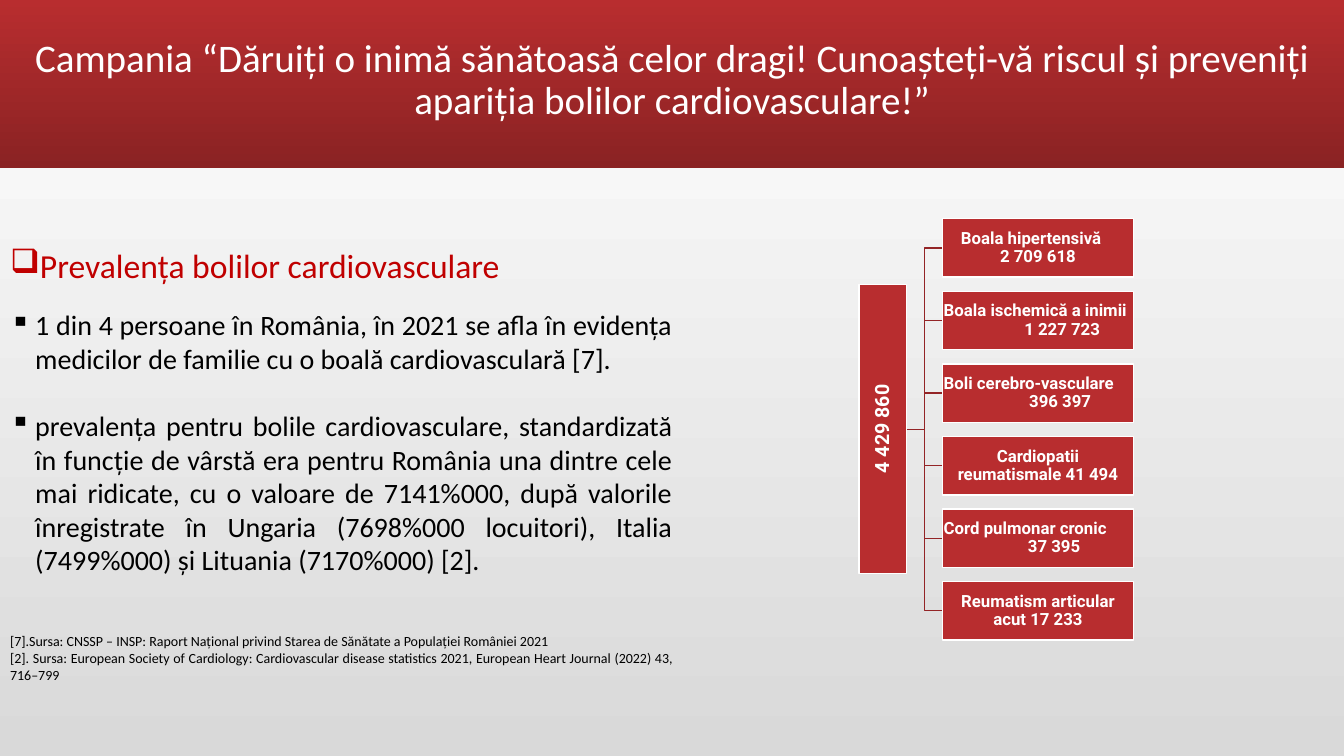
from lxml.etree import SubElement
from pptx import Presentation
from pptx.dml.color import RGBColor
from pptx.enum.shapes import MSO_SHAPE
from pptx.enum.text import MSO_ANCHOR, PP_ALIGN
from pptx.oxml.ns import qn
from pptx.util import Inches, Pt

RED = RGBColor(0xB8, 0x2D, 0x2F)
DEEP = RGBColor(0x8A, 0x22, 0x23)
WIRE = RGBColor(0x93, 0x24, 0x26)
HEAD = RGBColor(0xC0, 0x00, 0x00)
GREY = RGBColor(0xD9, 0xD9, 0xD9)
WHITE = RGBColor(0xFF, 0xFF, 0xFF)
BLACK = RGBColor(0x00, 0x00, 0x00)

TRUNK = 4.26
STEP = 0.72
CAUSES = [
    ("Boala hipertensivă", "2 709 618", 0.17, 0),
    ("Boala ischemică a inimii", "1 227 723", 0, 0.48),
    ("Boli cerebro-vasculare", "396 397", 0, 0.44),
    ("Cardiopatii", "reumatismale 41 494", None, 0),
    ("Cord pulmonar cronic", "37 395", 0, 0.32),
    ("Reumatism articular", "acut 17 233", None, 0),
]


def write(frame, text, size=12, color=WHITE, font="Calibri", bold=False,
          align=PP_ALIGN.CENTER, line=1.0, before=0, left=0, hang=0, bullet=None):
    para = frame.paragraphs[0]
    if para.runs:
        para = frame.add_paragraph()
    para.alignment = align
    para.line_spacing = line
    para.space_before = Pt(before)
    props = para._p.get_or_add_pPr()
    props.set("marL", str(Inches(left)))
    props.set("indent", str(Inches(-hang)))
    if bullet:
        SubElement(props, qn("a:buChar")).set("char", bullet)
    run = para.add_run()
    run.text = text
    run.font.size = Pt(size)
    run.font.name = font
    run.font.bold = bold
    run.font.color.rgb = color


def shade(fill, first, last, angle):
    fill.gradient()
    fill.gradient_angle = angle
    for stop, color in zip(fill.gradient_stops, (first, last)):
        stop.color.rgb = color


def set_frame(shape, pad, anchor):
    frame = shape.text_frame
    frame.word_wrap = True
    frame.vertical_anchor = anchor
    frame.margin_left = frame.margin_right = Inches(pad)
    frame.margin_top = frame.margin_bottom = Inches(pad)
    return frame


def add_rect(slide, x, y, wide, high):
    rect = slide.shapes.add_shape(
        MSO_SHAPE.RECTANGLE, Inches(x), Inches(y), Inches(wide), Inches(high))
    rect.shadow.inherit = False
    return rect


def add_node(slide, x, y, wide, high):
    node = add_rect(slide, x, y, wide, high)
    node.fill.solid()
    node.fill.fore_color.rgb = RED
    node.line.color.rgb = WHITE
    node.line.width = Pt(1)
    return node, set_frame(node, 0.01, MSO_ANCHOR.MIDDLE)


def add_wire(slide, y):
    pen = slide.shapes.build_freeform(Inches(8.99), Inches(TRUNK))
    bends = [(9.17, TRUNK), (9.17, y), (9.35, y)]
    pen.add_line_segments([(Inches(a), Inches(b)) for a, b in bends], close=False)
    wire = pen.convert_to_shape()
    wire.shadow.inherit = False
    wire.fill.background()
    wire.line.color.rgb = WIRE
    wire.line.width = Pt(1)


def add_title(slide):
    band = add_rect(slide, 0, 0, 13.33, 1.67)
    shade(band.fill, RED, DEEP, 270)
    band.line.fill.background()
    box = slide.shapes.add_textbox(0, 0, Inches(13.33), Inches(1.6))
    write(set_frame(box, 0.1, MSO_ANCHOR.MIDDLE),
          "Campania “Dăruiți o inimă sănătoasă celor dragi! Cunoașteți-vă riscul "
          "și preveniți apariția bolilor cardiovasculare!”", size=27.9, line=0.9)


def add_body(slide):
    box = slide.shapes.add_textbox(Inches(0.1), Inches(2.43), Inches(6.57), Inches(4.4))
    frame = set_frame(box, 0, MSO_ANCHOR.TOP)
    both = PP_ALIGN.JUSTIFY
    write(frame, "Prevalența bolilor cardiovasculare", size=24, color=HEAD,
          align=both, left=0.25, hang=0.25, bullet="❑")
    points = [
        ("1 din 4 persoane în România, în 2021 se afla în evidența medicilor de "
         "familie cu o boală cardiovasculară [7].", 16),
        ("prevalența pentru bolile cardiovasculare, standardizată în funcție de "
         "vârstă era pentru România una dintre cele mai ridicate, cu o valoare de "
         "7141%000, după valorile înregistrate în Ungaria (7698%000 locuitori), "
         "Italia (7499%000) și Lituania (7170%000) [2].", 24),
    ]
    for text, gap in points:
        write(frame, text, size=20, color=BLACK, align=both, before=gap,
              left=0.25, hang=0.25, bullet="▪")
    notes = [
        ("[7].Sursa: CNSSP – INSP: Raport Național privind Starea de Sănătate a "
         "Populației României 2021", 40),
        ("[2]. Sursa: European Society of Cardiology: Cardiovascular disease "
         "statistics 2021, European Heart Journal (2022) 43, 716–799", 0),
    ]
    for text, gap in notes:
        write(frame, text, size=10, color=BLACK, align=both, before=gap)


def add_tree(slide):
    rows = [TRUNK + STEP * (i - 2.5) for i in range(len(CAUSES))]
    for y in rows:
        add_wire(slide, y)
    total, frame = add_node(slide, 7.32, 4.02, 2.87, 0.47)
    total.rotation = 270
    write(frame, "4 429 860", size=14, font="Roboto", bold=True, line=0.9)
    for y, (name, count, start, shift) in zip(rows, CAUSES):
        frame = add_node(slide, 9.35, y - 0.29, 1.89, 0.58)[1]
        side = PP_ALIGN.CENTER if start is None else PP_ALIGN.LEFT
        write(frame, name, font="Roboto", bold=True, line=0.9,
              align=side, left=start or 0)
        write(frame, count, font="Roboto", bold=True, line=0.9, left=shift)


def main():
    deck = Presentation()
    deck.slide_width = Inches(13.33)
    deck.slide_height = Inches(7.5)
    slide = deck.slides.add_slide(deck.slide_layouts[6])
    shade(slide.background.fill, GREY, WHITE, 90)
    add_title(slide)
    add_body(slide)
    add_tree(slide)
    deck.save("out.pptx")


if __name__ == "__main__":
    main()
